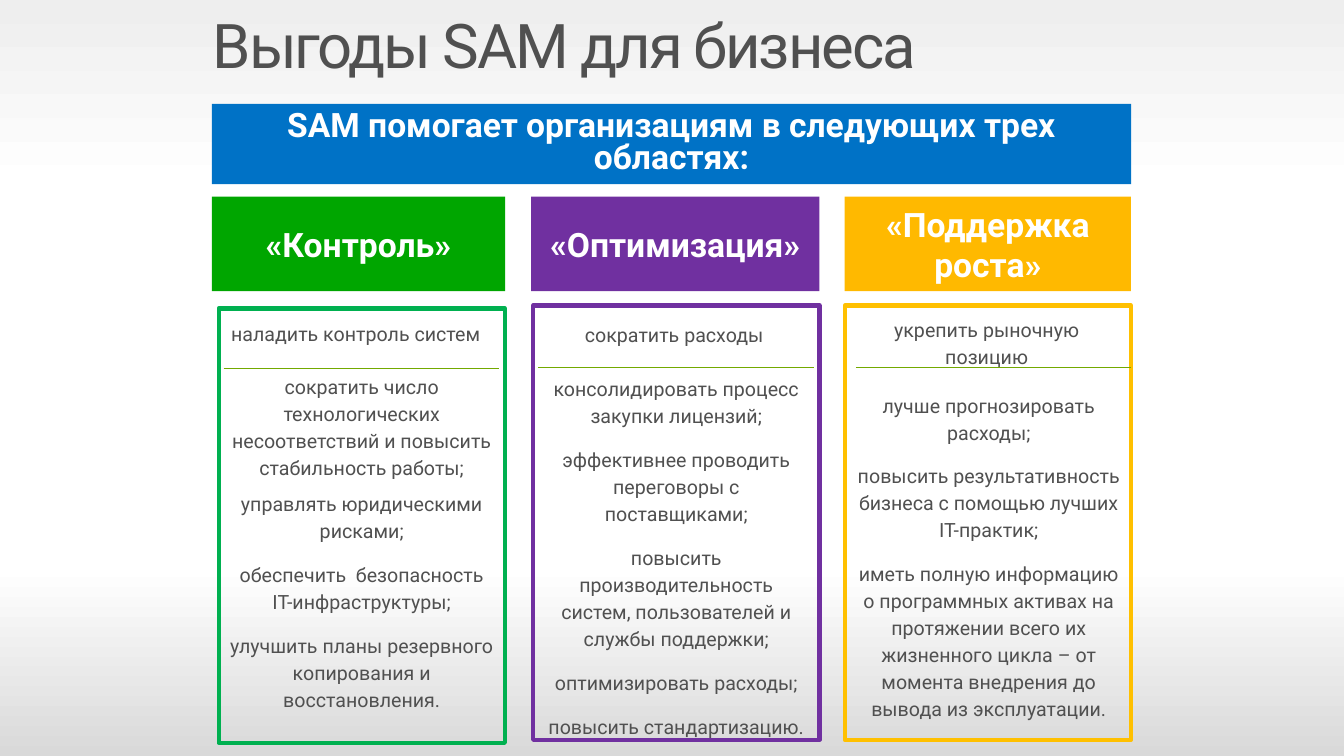
from copy import deepcopy
from pptx import Presentation
from pptx.dml.color import RGBColor
from pptx.enum.shapes import MSO_CONNECTOR as Conn, MSO_SHAPE as Shape
from pptx.enum.text import MSO_ANCHOR as Anchor, PP_ALIGN as Align
from pptx.oxml.ns import qn
from pptx.util import Pt
from lxml import etree

FONT = "Roboto"
GREY = "505050"
WHITE = "FFFFFF"


def color(code):
    return RGBColor.from_string(code)


def write(shape, lines, size, code, bold=False, space=1.0, after=()):
    """Fill a shape with centred paragraphs; after holds the gap below each."""
    frame = shape.text_frame
    frame.word_wrap = True
    frame.text = "\n".join(lines)
    for i, para in enumerate(frame.paragraphs):
        para.alignment = Align.CENTER
        para.line_spacing = space
        para.space_after = Pt(after[i] if after else 0)
        font = para.runs[0].font
        font.name, font.size, font.bold = FONT, Pt(size), bold
        font.color.rgb = color(code)
    return frame


prs = Presentation()
prs.slide_width, prs.slide_height = Pt(960), Pt(540)
slide = prs.slides.add_slide(prs.slide_layouts[6])
shapes = slide.shapes

# Background: four stops from top to bottom
back = slide.background.fill
back.gradient()
back.gradient_angle = 270
first, last = back.gradient_stops
stops = first._gs.getparent()
for _ in range(2):
    stops.insert(1, deepcopy(stops[0]))
tones = [(0, "EEEEEE"), (0.25, WHITE), (0.75, WHITE), (1, "D9D9D9")]
for stop, (place, code) in zip(back.gradient_stops, tones):
    stop.position = place
    stop.color.rgb = color(code)

# Title
title = shapes.add_textbox(Pt(152), Pt(0), Pt(780), Pt(70))
frame = write(title, ["Выгоды SAM для бизнеса"], 44, GREY, space=0.9)
frame.margin_left = frame.margin_right = frame.margin_top = frame.margin_bottom = 0
frame.vertical_anchor = Anchor.MIDDLE
frame.paragraphs[0].alignment = Align.LEFT
frame.paragraphs[0].runs[0].font._element.set("spc", "-150")

# Filled bars: left, top, width, height, colour, line spacing, text
bars = [
    (151.3, 74.2, 656.6, 57.4, "0072C6", 0.8,
     "SAM помогает организациям в следующих трех областях:"),
    (151.3, 140.4, 209.5, 67.7, "00A600", 1.0, "«Контроль»"),
    (379.4, 140.4, 205.9, 67.7, "7030A0", 1.0, "«Оптимизация»"),
    (603.4, 140.4, 204.5, 67.7, "FFB900", 1.0, "«Поддержка роста»"),
]
for left, top, width, height, code, space, text in bars:
    bar = shapes.add_shape(Shape.RECTANGLE, Pt(left), Pt(top), Pt(width), Pt(height))
    bar.shadow.inherit = False
    bar.fill.solid()
    bar.fill.fore_color.rgb = color(code)
    bar.line.fill.background()
    write(bar, [text], 24, WHITE, True, space).vertical_anchor = Anchor.MIDDLE

# Columns: frame (left, top), colour, lead (left, top, text), rule (from, to, y),
# body (left, top, gaps, lines)
columns = [
    ((156.2, 220.3), "00B050",
     (151.9, 223.9, "наладить контроль систем"), (159.8, 356.4, 263.5),
     (156.2, 262, (6, 12, 12, 12), [
         "сократить число технологических несоответствий и повысить стабильность работы;",
         "управлять юридическими рисками;",
         "обеспечить  безопасность IT-инфраструктуры;",
         "улучшить планы резервного копирования и восстановления."])),
    ((380.9, 218.2), "7030A0",
     (379.4, 224.6, "сократить расходы"), (384.5, 581.8, 262.4),
     (380.9, 263.5, (12,) * 5, [
         "консолидировать процесс закупки лицензий;",
         "эффективнее проводить переговоры с поставщиками;",
         "повысить производительность систем, пользователей и службы поддержки;",
         "оптимизировать расходы;",
         "повысить стандартизацию."])),
    ((603.4, 218.2), "FFC000",
     (602.6, 221, "укрепить рыночную позицию"), (611.3, 807.8, 262.4),
     (604.1, 275, (12,) * 3, [
         "лучше прогнозировать расходы;",
         "повысить результативность бизнеса с помощью лучших IT-практик;",
         "иметь полную информацию о программных активах на протяжении всего их "
         "жизненного цикла – от момента внедрения до вывода из эксплуатации."])),
]
wide = Pt(204.5)
for (left, top), code, lead, rule, body in columns:
    box = shapes.add_shape(Shape.RECTANGLE, Pt(left), Pt(top), wide, Pt(310.3))
    box.shadow.inherit = False
    box.fill.background()
    box.line.color.rgb = color(code)
    box.line.width = Pt(3)

    x, y, text = lead
    head = shapes.add_textbox(Pt(x), Pt(y), wide, Pt(27))
    write(head, [text], 14, GREY, space=1.15)

    start, end, y = rule
    line = shapes.add_connector(Conn.STRAIGHT, Pt(start), Pt(y), Pt(end), Pt(y))
    line.line.color.rgb = color("73A900")
    line.line.width = Pt(0.75)
    etree.SubElement(line._element.spPr, qn("a:effectLst"))

    x, y, gaps, lines = body
    note = shapes.add_textbox(Pt(x), Pt(y), wide, Pt(250))
    write(note, lines, 14, GREY, space=1.15, after=gaps)

prs.save("out.pptx")
